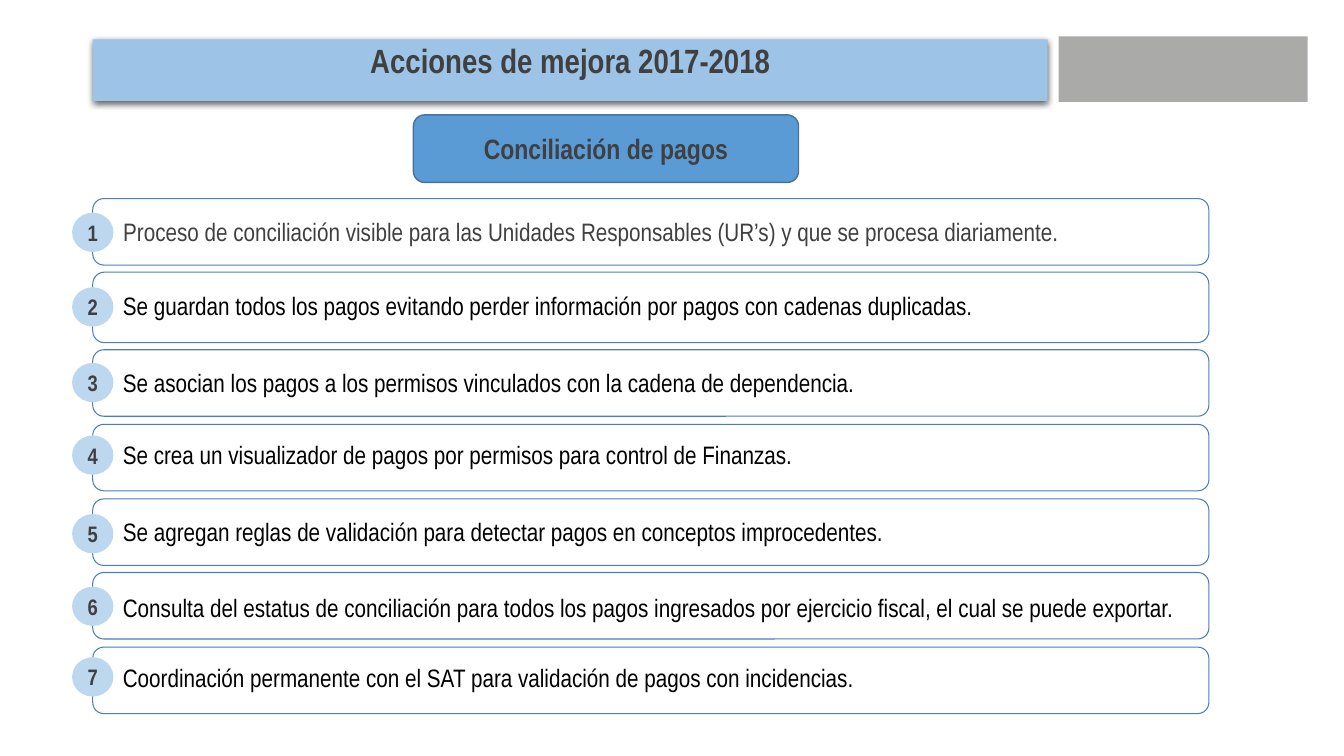
from pptx import Presentation
from pptx.dml.color import RGBColor as Rgb
from pptx.enum.shapes import MSO_SHAPE as Form
from pptx.enum.text import MSO_ANCHOR as Anchor, PP_ALIGN as Align
from pptx.oxml import parse_xml
from pptx.oxml.ns import nsdecls
from pptx.util import Inches, Pt

FONT = "Arial Narrow"
COLORS = {"band": "9DC3E6", "topic": "5B9BD5", "edge": "43739E", "rule": "4B7EBC",
          "dot": "BDD7EE", "gray": "404040", "black": "000000", "logo": "AAAAA9"}
TITLE = "Acciones de mejora 2017-2018"
TOPIC = "Conciliación de pagos"
FIRST = ("Proceso de conciliación visible para las Unidades Responsables (UR’s) "
         "y que se procesa diariamente.")
ROWS = [
    (FIRST, 1.97, 0.66, 2.11, None),
    ("Se guardan todos los pagos evitando perder información por pagos con cadenas duplicadas.",
     2.7, 0.7, 2.85, 2.83),
    ("Se asocian los pagos a los permisos vinculados con la cadena de dependencia.",
     3.47, 0.66, 3.6, 3.59),
    ("Se crea un visualizador de pagos por permisos para control de Finanzas.",
     4.21, 0.66, 4.32, 4.31),
    ("Se agregan reglas de validación para detectar pagos en conceptos improcedentes.",
     4.95, 0.66, 5.1, 5.07),
    ("Consulta del estatus de conciliación para todos los pagos ingresados por ejercicio "
     "fiscal, el cual se puede exportar.", 5.68, 0.66, 5.82, 5.83),
    ("Coordinación permanente con el SAT para validación de pagos con incidencias.",
     6.42, 0.66, 6.52, 6.52),
]
LEFT, WIDE = 0.92, 11.07
DOT_W, DOT_H = 0.41, 0.39
TEXT_X, TEXT_W, TEXT_H = 1.12, 10.74, 0.4

deck = Presentation()
deck.slide_width, deck.slide_height = Inches(13.33), Inches(7.5)
slide = deck.slides.add_slide(deck.slide_layouts[6])


def tint(name):
    return Rgb.from_string(COLORS[name])


def draw(form, x, y, w, h, fill=None, line=None, weight=0.75):
    shape = slide.shapes.add_shape(form, Inches(x), Inches(y), Inches(w), Inches(h))
    shape.shadow.inherit = False
    if fill:
        shape.fill.solid()
        shape.fill.fore_color.rgb = tint(fill)
    else:
        shape.fill.background()
    if line:
        shape.line.color.rgb = tint(line)
        shape.line.width = Pt(weight)
    else:
        shape.line.fill.background()
    return shape


def write(shape, text, size, color="gray", bold=False, align=Align.CENTER, anchor=Anchor.MIDDLE):
    frame = shape.text_frame
    frame.word_wrap = True
    frame.vertical_anchor = anchor
    para = frame.paragraphs[0]
    para.alignment = align
    run = para.add_run()
    run.text = text
    run.font.name, run.font.size, run.font.bold = FONT, Pt(size), bold
    run.font.color.rgb = tint(color)
    return frame


draw(Form.RECTANGLE, 10.5, 0.36, 2.47, 0.65, "logo")

band = draw(Form.RECTANGLE, LEFT, 0.39, 9.47, 0.61, "band")
write(band, TITLE, 24, bold=True, anchor=Anchor.TOP).paragraphs[0].line_spacing = 0.9
glow = parse_xml(
    f'<a:outerShdw {nsdecls("a")} blurRad="{Pt(4.5)}" dist="{Pt(1.5)}" dir="5400000" '
    'rotWithShape="0"><a:srgbClr val="000000"><a:alpha val="63000"/></a:srgbClr></a:outerShdw>')
band.element.spPr.find("{*}effectLst").append(glow)

topic = draw(Form.ROUNDED_RECTANGLE, 4.1, 1.14, 3.82, 0.67, "topic", "edge", 1)
write(topic, TOPIC, 20, bold=True)

for num, (text, top, high, dot_y, text_y) in enumerate(ROWS, 1):
    box = draw(Form.ROUNDED_RECTANGLE, LEFT, top, WIDE, high, line="rule")
    if text_y is None:
        frame = write(box, text, 18, align=Align.LEFT)
        frame.margin_left = Inches(0.27)
    else:
        label = slide.shapes.add_textbox(
            Inches(TEXT_X), Inches(text_y), Inches(TEXT_W), Inches(TEXT_H))
        write(label, text, 18, "black", align=Align.LEFT, anchor=Anchor.TOP)
    dot = draw(Form.OVAL, LEFT - DOT_W / 2, dot_y, DOT_W, DOT_H, "dot")
    frame = write(dot, str(num), 16, bold=True)
    frame.margin_left = frame.margin_right = 0

deck.save("out.pptx")
